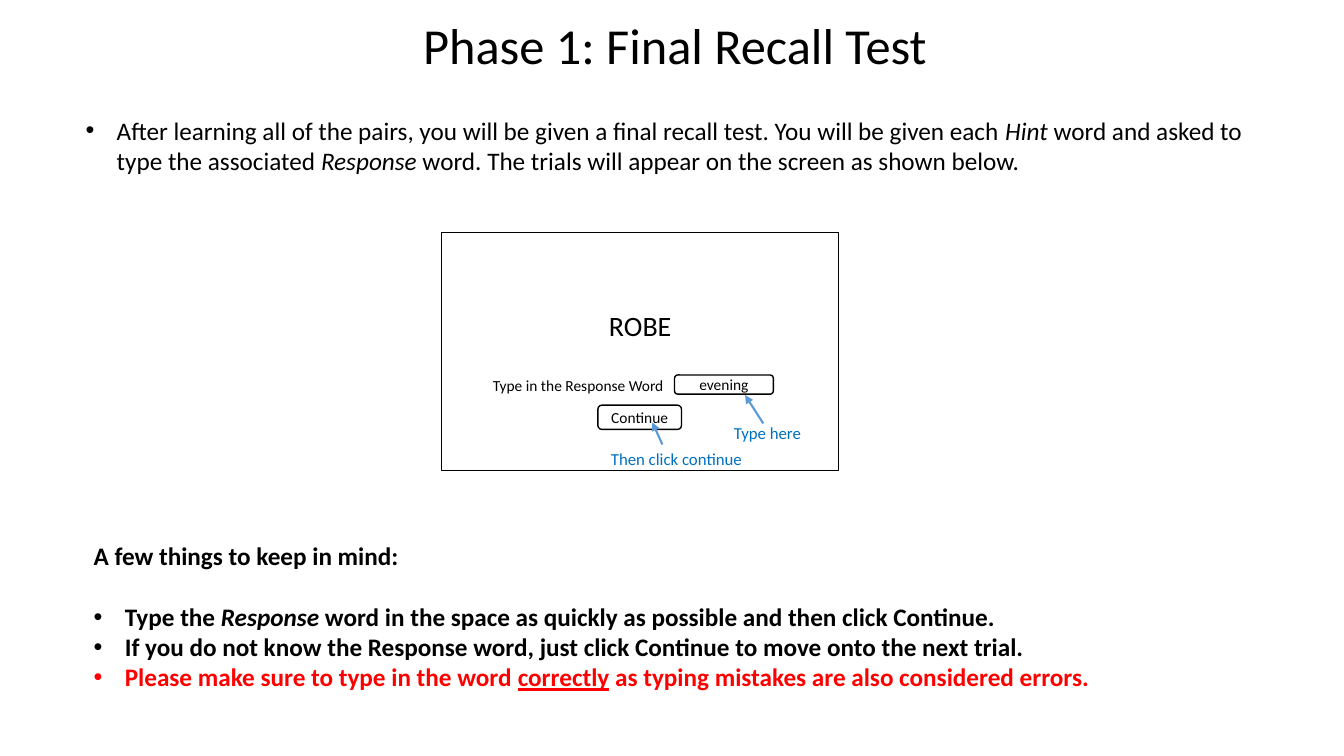
from lxml import etree
from pptx import Presentation
from pptx.dml.color import RGBColor
from pptx.enum import shapes, text
from pptx.oxml import ns
from pptx.util import Inches, Pt

COLORS = {"ink": "000000", "warning": "FF0000", "hint": "0070C0", "arrow": "5B9BD5"}
CENTER = text.PP_ALIGN.CENTER
LEFT = text.PP_ALIGN.LEFT


def color(name):
    return RGBColor.from_string(COLORS[name])


def place(box, left, top, width, height):
    return [Inches(n) for n in (box[0] + left, box[1] + top, width, height)]


def add_run(paragraph, words, size=18, ink="ink", **style):
    run = paragraph.add_run()
    run.text = words
    run.font.name = "Calibri"
    run.font.size = Pt(size)
    run.font.color.rgb = color(ink)
    for key, value in style.items():
        setattr(run.font, key, value)


def add_bullet(paragraph, indent=0.31):
    properties = paragraph._p.get_or_add_pPr()
    properties.set("marL", str(Inches(indent)))
    properties.set("indent", str(Inches(-indent)))
    font = etree.SubElement(properties, ns.qn("a:buFont"))
    font.set("typeface", "Arial")
    bullet = etree.SubElement(properties, ns.qn("a:buChar"))
    bullet.set("char", "•")


def add_textbox(parent, position):
    frame = parent.add_textbox(*position).text_frame
    frame.word_wrap = True
    frame.auto_size = text.MSO_AUTO_SIZE.SHAPE_TO_FIT_TEXT
    return frame


def add_outline(parent, kind, position):
    outline = parent.add_shape(kind, *position)
    outline.shadow.inherit = False
    outline.fill.background()
    outline.line.color.rgb = color("ink")
    outline.line.width = Pt(1)
    frame = outline.text_frame
    frame.word_wrap = True
    frame.vertical_anchor = text.MSO_ANCHOR.MIDDLE
    frame.paragraphs[0].alignment = CENTER
    return frame


def add_arrow(parent, box, start, end):
    points = [Inches(box[axis] + point[axis]) for point in (start, end) for axis in (0, 1)]
    arrow = parent.add_connector(shapes.MSO_CONNECTOR.STRAIGHT, *points)
    arrow.line.color.rgb = color("arrow")
    arrow.line.width = Pt(1.5)
    tip = etree.SubElement(arrow.line._get_or_add_ln(), ns.qn("a:tailEnd"))
    tip.set("type", "triangle")
    etree.SubElement(arrow._element.spPr, ns.qn("a:effectLst"))


def build_title(slide, box):
    title = slide.shapes.title
    title.left, title.top, title.width, title.height = place(box, 0, 0, *box[2:])
    frame = title.text_frame
    frame.auto_size = text.MSO_AUTO_SIZE.SHAPE_TO_FIT_TEXT
    frame.paragraphs[0].alignment = CENTER
    add_run(frame.paragraphs[0], "Phase 1: Final Recall Test", size=36)


def build_intro(slide, box):
    intro = add_textbox(slide.shapes, place(box, 0, 0, *box[2:])).paragraphs[0]
    add_bullet(intro)
    add_run(intro, "After learning all of the pairs, you will be given a final recall test. "
                   "You will be given each ")
    add_run(intro, "Hint", italic=True)
    add_run(intro, " word and asked to type the associated ")
    add_run(intro, "Response", italic=True)
    add_run(intro, " word. The trials will appear on the screen as shown below.")


def build_trial_screen(slide, box):
    screen = slide.shapes.add_group_shape().shapes
    display = add_outline(screen, shapes.MSO_SHAPE.RECTANGLE, place(box, 0, 0, *box[2:]))
    add_run(display.paragraphs[0], "ROBE", size=20)
    prompt = display.add_paragraph()
    prompt.alignment = LEFT
    prompt.space_before = Pt(24)
    prompt._p.get_or_add_pPr().set("marL", str(Inches(0.41)))
    add_run(prompt, "Type in the Response Word", size=11)

    for label, position in (("evening", (2.31, 1.41, 0.98, 0.19)),
                            ("Continue", (1.55, 1.71, 0.83, 0.24))):
        field = add_outline(screen, shapes.MSO_SHAPE.ROUNDED_RECTANGLE, place(box, *position))
        field.margin_top = field.margin_bottom = 0
        add_run(field.paragraphs[0], label, size=11)

    for label, position, start, end in (
            ("Type here", (2.8, 1.83, 1.05, 0.3), (3.19, 1.89), (3.01, 1.61)),
            ("Then click continue", (1.58, 2.09, 1.71, 0.3), (2.19, 2.1), (2.09, 1.88))):
        add_arrow(screen, box, start, end)
        hint = add_textbox(screen, place(box, *position))
        add_run(hint.paragraphs[0], label, size=12, ink="hint")


def build_reminders(slide, box):
    frame = add_textbox(slide.shapes, place(box, 0, 0, *box[2:]))
    add_run(frame.paragraphs[0], "A few things to keep in mind:", bold=True)
    reminders = (
        ("ink", (("Type the ", {}), ("Response", {"italic": True}),
                 (" word in the space as quickly as possible and then click Continue.", {}))),
        ("ink", (("If you do not know the Response word, just click Continue "
                  "to move onto the next trial.", {}),)),
        ("warning", (("Please make sure to type in the word ", {}),
                     ("correctly", {"underline": True}),
                     (" as typing mistakes are also considered errors.", {}))),
    )
    for number, (ink, parts) in enumerate(reminders):
        reminder = frame.add_paragraph()
        if number == 0:
            reminder.space_before = Pt(22)
        add_bullet(reminder)
        for words, style in parts:
            add_run(reminder, words, ink=ink, bold=True, **style)


def main():
    deck = Presentation()
    deck.slide_width, deck.slide_height = Inches(13.33), Inches(7.5)
    slide = deck.slides.add_slide(deck.slide_layouts.get_by_name("Title Only"))
    build_title(slide, (3.04, 0.08, 7.31, 0.71))
    build_intro(slide, (0.75, 1.09, 11.96, 0.71))
    build_reminders(slide, (0.83, 5.31, 11.96, 1.62))
    build_trial_screen(slide, (4.38, 2.31, 3.94, 2.36))
    deck.save("out.pptx")


if __name__ == "__main__":
    main()
